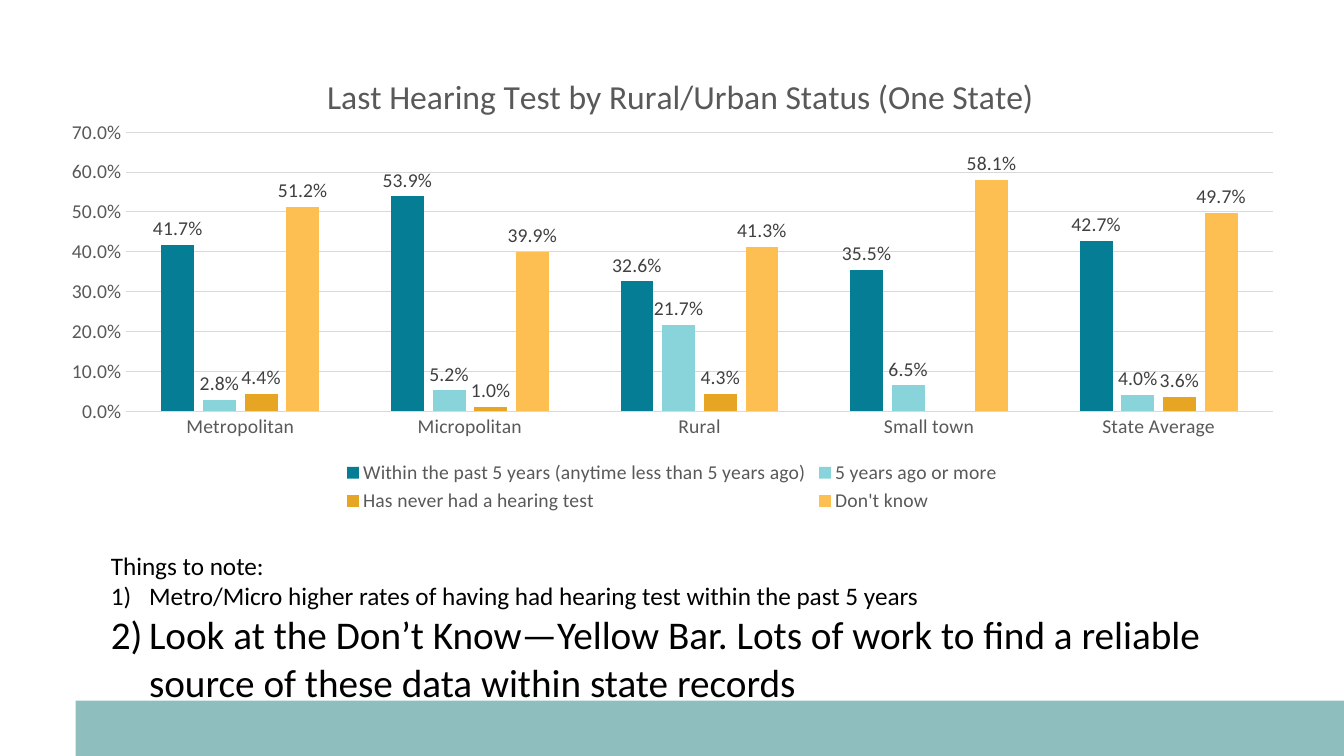
import pptx
import pptx.util
import pptx.dml.color
import pptx.chart.data
import pptx.enum.chart
import pptx.enum.shapes
import pptx.enum.text
import pptx.oxml
import pptx.oxml.ns

SLIDE_W, SLIDE_H = 13.33, 7.5
FONT = "Calibri"
PERCENT = "###0.0%"
GRAY, LABEL_GRAY, RULE_GRAY = "595959", "404040", "D9D9D9"

HEADING = "Last Hearing Test by Rural/Urban Status (One State)"
AREAS = ["Metropolitan", "Micropolitan", "Rural", "Small town", "State Average"]
ANSWERS = [
    ("Within the past 5 years (anytime less than 5 years ago)", "057E95",
     (0.417, 0.539, 0.326, 0.355, 0.427)),
    ("5 years ago or more", "89D3DA", (0.028, 0.052, 0.217, 0.065, 0.04)),
    ("Has never had a hearing test", "E6A523", (0.044, 0.01, 0.043, None, 0.036)),
    ("Don't know", "FDBF51", (0.512, 0.399, 0.413, 0.581, 0.497)),
]
NOTES = [
    ("Things to note:", 18, False),
    ("Metro/Micro higher rates of having had hearing test within the past 5 years", 18, True),
    ("Look at the Don’t Know—Yellow Bar. Lots of work to find a reliable "
     "source of these data within state records", 28, True),
]


def rgb(value):
    return pptx.dml.color.RGBColor.from_string(value)


def box(left, top, width, height):
    return [pptx.util.Inches(n) for n in (left, top, width, height)]


def style(font, size, color):
    font.name = FONT
    font.size = pptx.util.Pt(size)
    font.bold = False
    font.color.rgb = rgb(color)


def rule(line):
    line.color.rgb = rgb(RULE_GRAY)
    line.width = pptx.util.Pt(0.75)


def place(element, index, **shares):
    for old in element.findall(pptx.oxml.ns.qn("c:layout")):
        element.remove(old)
    modes = "".join(f'<c:{k}Mode val="edge"/>' for k in ("x", "y"))
    values = "".join(f'<c:{k} val="{v}"/>' for k, v in shares.items())
    target = '<c:layoutTarget val="inner"/>' if "w" in shares else ""
    element.insert(index, pptx.oxml.parse_xml(
        f'<c:layout {pptx.oxml.ns.nsdecls("c")}><c:manualLayout>'
        f"{target}{modes}{values}</c:manualLayout></c:layout>"))


def add_band(slide):
    left, top = 0.75, 6.95
    band = slide.shapes.add_shape(
        pptx.enum.shapes.MSO_SHAPE.RECTANGLE,
        *box(left, top, SLIDE_W - left, SLIDE_H - top))
    band.shadow.inherit = False
    band.fill.solid()
    band.fill.fore_color.rgb = rgb("8EBEBE")
    band.line.fill.background()


def add_hearing_chart(slide):
    data = pptx.chart.data.CategoryChartData(number_format=PERCENT)
    data.categories = AREAS
    for answer, _, shares in ANSWERS:
        data.add_series(answer, shares)
    chart = slide.shapes.add_chart(
        pptx.enum.chart.XL_CHART_TYPE.COLUMN_CLUSTERED,
        *box(0.45, 0.44, 12.43, 4.69), data).chart
    style(chart.font, 14, "000000")

    heading = chart.chart_title.text_frame.paragraphs[0].add_run()
    heading.text = HEADING
    style(heading.font, 24, GRAY)
    chart.chart_title.include_text_in_layout = False
    place(chart.chart_title._element, 1, x=0.22, y=0.05)
    place(chart._chartSpace.chart.plotArea, 0, x=0.064, y=0.186, w=0.916, h=0.59)

    plot = chart.plots[0]
    plot.gap_width, plot.overlap = 219, -27
    plot.vary_by_categories = False
    for series, (_, color, _) in zip(plot.series, ANSWERS):
        series.format.fill.solid()
        series.format.fill.fore_color.rgb = rgb(color)
        series.invert_if_negative = False
        labels = series.data_labels
        labels.show_value = True
        labels.number_format = PERCENT
        labels.number_format_is_linked = False
        labels.position = pptx.enum.chart.XL_LABEL_POSITION.OUTSIDE_END
        style(labels.font, 14, LABEL_GRAY)

    for axis in (chart.category_axis, chart.value_axis):
        axis.major_tick_mark = pptx.enum.chart.XL_TICK_MARK.NONE
        axis.minor_tick_mark = pptx.enum.chart.XL_TICK_MARK.NONE
        style(axis.tick_labels.font, 14, GRAY)
    rule(chart.category_axis.format.line)
    amounts = chart.value_axis
    amounts.minimum_scale, amounts.maximum_scale, amounts.major_unit = 0, 0.7, 0.1
    amounts.format.line.fill.background()
    amounts.has_major_gridlines = True
    rule(amounts.major_gridlines.format.line)
    amounts.tick_labels.number_format = PERCENT
    amounts.tick_labels.number_format_is_linked = False

    chart.has_legend = True
    chart.legend.position = pptx.enum.chart.XL_LEGEND_POSITION.BOTTOM
    chart.legend.include_in_layout = False
    style(chart.legend.font, 14, GRAY)


def add_notes(slide):
    frame = slide.shapes.add_textbox(*box(1, 5.41, 11.88, 1.65)).text_frame
    frame.word_wrap = True
    frame.auto_size = pptx.enum.text.MSO_AUTO_SIZE.SHAPE_TO_FIT_TEXT
    indent = pptx.util.Inches(0.38)
    for i, (words, size, numbered) in enumerate(NOTES):
        note = frame.add_paragraph() if i else frame.paragraphs[0]
        if numbered:
            props = note._p.get_or_add_pPr()
            props.set("marL", str(indent))
            props.set("indent", str(-indent))
            props.append(pptx.oxml.parse_xml(
                f'<a:buAutoNum {pptx.oxml.ns.nsdecls("a")} type="arabicParenR"/>'))
        run = note.add_run()
        run.text = words
        style(run.font, size, "000000")


def main():
    deck = pptx.Presentation()
    deck.slide_width = pptx.util.Inches(SLIDE_W)
    deck.slide_height = pptx.util.Inches(SLIDE_H)
    slide = deck.slides.add_slide(deck.slide_layouts.get_by_name("Blank"))
    add_band(slide)
    add_hearing_chart(slide)
    add_notes(slide)
    deck.save("out.pptx")


if __name__ == "__main__":
    main()
